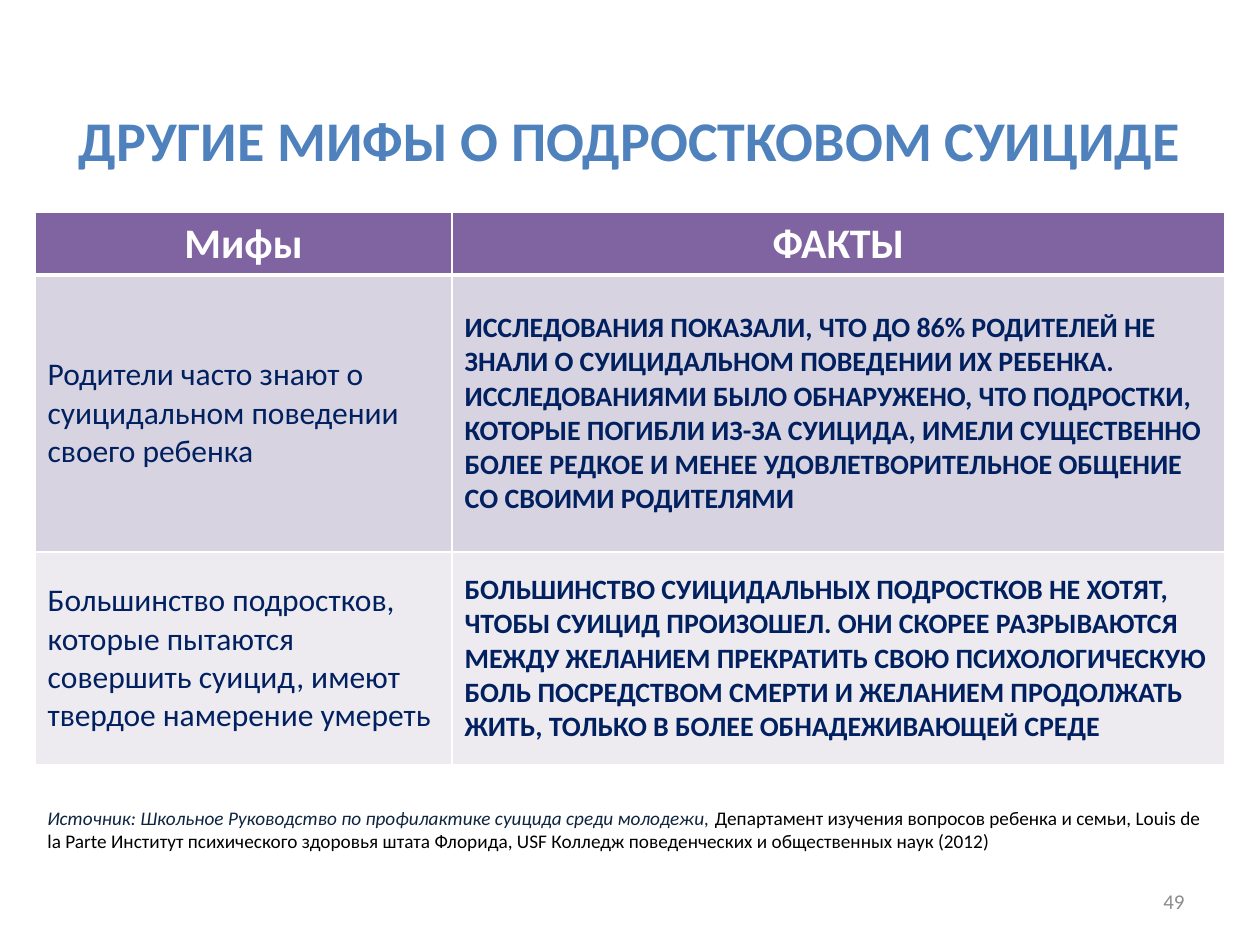
"""Build a slide with a table of myths and facts about teenage suicide."""
from lxml import etree
from pptx import Presentation, util as u
from pptx.dml import color
from pptx.enum import text
from pptx.oxml import ns

PX = 914400 // 126
LEFT, CENTER, RIGHT = text.PP_ALIGN.LEFT, text.PP_ALIGN.CENTER, text.PP_ALIGN.RIGHT
TOP, MIDDLE = text.MSO_ANCHOR.TOP, text.MSO_ANCHOR.MIDDLE


def rgb(value):
    return color.RGBColor.from_string(value)


def write(frame, lines, size, ink, bold=False, align=LEFT, anchor=MIDDLE):
    frame.word_wrap = True
    frame.vertical_anchor = anchor
    frame.text = "\n".join(lines)
    for paragraph in frame.paragraphs:
        paragraph.alignment = align
        font = paragraph.font
        font.name, font.size, font.bold = "Calibri", u.Pt(size), bold
        font.color.rgb = rgb(ink)


deck = Presentation()
deck.slide_width, deck.slide_height = 1260 * PX, 945 * PX
slide = deck.slides.add_slide(deck.slide_layouts[6])

title = slide.shapes.add_textbox(22 * PX, 84 * PX, 1216 * PX, 110 * PX)
write(title.text_frame, ["ДРУГИЕ МИФЫ О ПОДРОСТКОВОМ СУИЦИДЕ"], 32, "4F81BD", True, CENTER)

number = slide.shapes.add_textbox(903 * PX, 876 * PX, 294 * PX, 50 * PX)
write(number.text_frame, ["49"], 12, "8C8C8C", align=RIGHT)

rows = [
    (["Мифы"], ["ФАКТЫ"]),
    (["Родители часто знают о суицидальном поведении своего ребенка"],
     ["ИССЛЕДОВАНИЯ ПОКАЗАЛИ, ЧТО ДО 86% РОДИТЕЛЕЙ НЕ ЗНАЛИ О СУИЦИДАЛЬНОМ ПОВЕДЕНИИ ИХ РЕБЕНКА.",
      "ИССЛЕДОВАНИЯМИ БЫЛО ОБНАРУЖЕНО, ЧТО ПОДРОСТКИ, КОТОРЫЕ ПОГИБЛИ ИЗ-ЗА СУИЦИДА, "
      "ИМЕЛИ СУЩЕСТВЕННО БОЛЕЕ РЕДКОЕ И МЕНЕЕ УДОВЛЕТВОРИТЕЛЬНОЕ ОБЩЕНИЕ СО СВОИМИ РОДИТЕЛЯМИ"]),
    (["Большинство подростков, которые пытаются совершить суицид, имеют твердое намерение умереть"],
     ["БОЛЬШИНСТВО СУИЦИДАЛЬНЫХ ПОДРОСТКОВ НЕ ХОТЯТ, ЧТОБЫ СУИЦИД ПРОИЗОШЕЛ. "
      "ОНИ СКОРЕЕ РАЗРЫВАЮТСЯ МЕЖДУ ЖЕЛАНИЕМ ПРЕКРАТИТЬ СВОЮ ПСИХОЛОГИЧЕСКУЮ БОЛЬ "
      "ПОСРЕДСТВОМ СМЕРТИ И ЖЕЛАНИЕМ ПРОДОЛЖАТЬ ЖИТЬ, ТОЛЬКО В БОЛЕЕ ОБНАДЕЖИВАЮЩЕЙ СРЕДЕ"]),
]
heights = [61, 277, 213]
widths = [417, 773]
fills = ["8064A2", "D8D3E0", "EDEAF0"]

myths = slide.shapes.add_table(3, 2, 35 * PX, 212 * PX, sum(widths) * PX, sum(heights) * PX).table
for column, width in zip(myths.columns, widths):
    column.width = width * PX
for r, (row, height, fill) in enumerate(zip(rows, heights, fills)):
    myths.rows[r].height = height * PX
    for c, lines in enumerate(row):
        cell = myths.cell(r, c)
        if r == 0:
            write(cell.text_frame, lines, 24, "FFFFFF", True, CENTER, TOP)
        else:
            write(cell.text_frame, lines, (18, 16)[c], "002060", c == 1)
            cell.vertical_anchor = MIDDLE
        properties = cell._tc.get_or_add_tcPr()
        for side in "LRTB":
            thick = (r, side) in [(0, "B"), (1, "T")]
            border = etree.SubElement(properties, ns.qn(f"a:ln{side}"), w=str(u.Pt(3 if thick else 1)))
            paint = etree.SubElement(border, ns.qn("a:solidFill"))
            etree.SubElement(paint, ns.qn("a:srgbClr"), val="FFFFFF")
        cell.fill.solid()
        cell.fill.fore_color.rgb = rgb(fill)

source = slide.shapes.add_textbox(35 * PX, 800 * PX, 1190 * PX, 59 * PX)
source.text_frame.word_wrap = True
citation = source.text_frame.paragraphs[0]
citation.font.name, citation.font.size = "Calibri", u.Pt(11)
for words, ink, italic in [
    ("Источник: Школьное Руководство по профилактике суицида среди молодежи, ", "0F243E", True),
    ("Департамент изучения вопросов ребенка и семьи, Louis de la Parte Институт психического "
     "здоровья штата Флорида, USF Колледж поведенческих и общественных наук (2012)", "000000", False),
]:
    run = citation.add_run()
    run.text, run.font.italic = words, italic
    run.font.color.rgb = rgb(ink)

deck.save("out.pptx")
